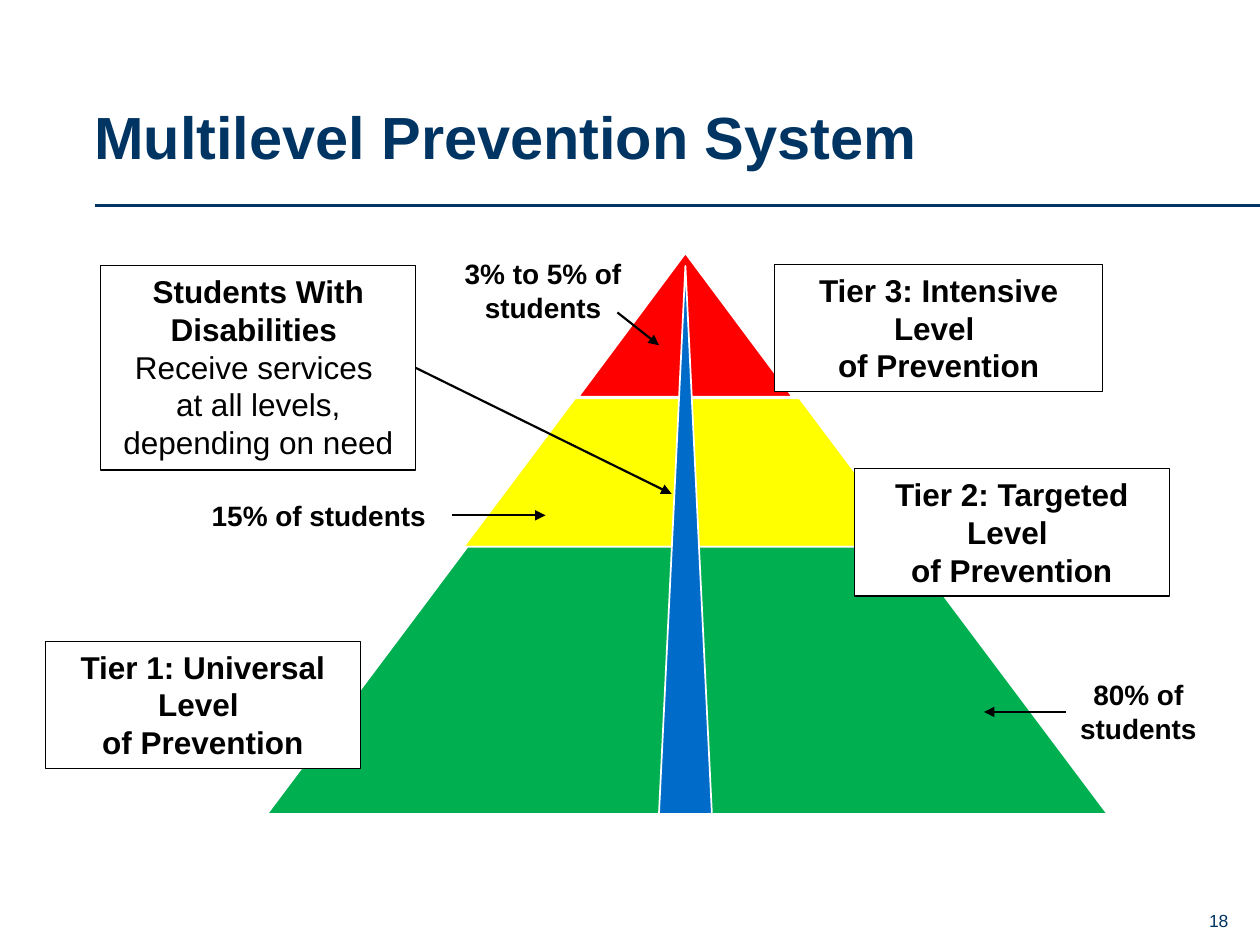
from dataclasses import dataclass

from lxml import etree
from pptx import Presentation
from pptx.dml.color import RGBColor
from pptx.enum.shapes import MSO_CONNECTOR as Connector, MSO_SHAPE as Shape
from pptx.enum.text import MSO_ANCHOR as Anchor, PP_ALIGN as Align
from pptx.oxml.ns import qn
from pptx.util import Inches, Pt


@dataclass(frozen=True)
class Theme:
    font: str = "Arial"
    navy: str = "003462"
    black: str = "000000"
    white: str = "FFFFFF"
    red: str = "FF0000"
    yellow: str = "FFFF00"
    green: str = "00B050"
    blue: str = "006BC9"
    title_size: int = 34
    box_size: int = 18
    label_size: int = 16
    number_size: int = 10


class SlideBuilder:
    def __init__(self, slide, theme):
        self.slide = slide
        self.theme = theme

    def style_font(self, para, size, color, bold):
        font = para.font
        font.name, font.size, font.bold = self.theme.font, Pt(size), bold
        font.color.rgb = RGBColor.from_string(color)

    def title(self, text, area):
        box = self.slide.shapes.title
        box.left, box.top, box.width, box.height = map(Inches, area)
        frame = box.text_frame
        frame.text = text
        frame.vertical_anchor = Anchor.BOTTOM
        self.set_margins(frame, 0, 0)
        para = frame.paragraphs[0]
        para.alignment, para.line_spacing = Align.LEFT, 0.9
        self.style_font(para, self.theme.title_size, self.theme.navy, True)

    def set_margins(self, frame, side, end):
        frame.margin_left = frame.margin_right = Inches(side)
        frame.margin_top = frame.margin_bottom = Inches(end)

    def shape(self, kind, area, fill, line, width, shapes=None):
        """Add a preset shape to the slide, or to a group's shapes."""
        shape = (shapes or self.slide.shapes).add_shape(kind, *map(Inches, area))
        shape.shadow.inherit = False
        if fill:
            shape.fill.solid()
            shape.fill.fore_color.rgb = RGBColor.from_string(fill)
        else:
            shape.fill.background()
        shape.line.color.rgb = RGBColor.from_string(line)
        shape.line.width = Pt(width)
        return shape

    def pyramid(self, levels):
        group = self.slide.shapes.add_group_shape()
        for area, fill in levels:
            level = self.shape(Shape.TRAPEZOID, area, fill, self.theme.white, 1, group.shapes)
            level.adjustments[0] = 0.75

    def box(self, area, paragraphs, fill=None, side_margin=0.1):
        """Add a framed box; paragraphs are (text, bold) pairs."""
        box = self.shape(Shape.RECTANGLE, area, fill, self.theme.black, 0.75)
        frame = box.text_frame
        frame.word_wrap = True
        frame.vertical_anchor = Anchor.TOP
        self.set_margins(frame, side_margin, 0.05)
        for index, (text, bold) in enumerate(paragraphs):
            para = frame.add_paragraph() if index else frame.paragraphs[0]
            para.text = text
            para.alignment = Align.CENTER
            self.style_font(para, self.theme.box_size, self.theme.black, bold)
        return box

    def label(self, area, text, wrap=True):
        box = self.slide.shapes.add_textbox(*map(Inches, area))
        box.text_frame.word_wrap = wrap
        para = box.text_frame.paragraphs[0]
        para.text, para.alignment = text, Align.CENTER
        self.style_font(para, self.theme.label_size, self.theme.black, True)

    def page_number(self, area, text):
        box = self.slide.shapes.add_textbox(*map(Inches, area))
        frame = box.text_frame
        frame.word_wrap = False
        frame.vertical_anchor = Anchor.MIDDLE
        self.set_margins(frame, 0, 0)
        para = frame.paragraphs[0]
        para.text, para.alignment = text, Align.RIGHT
        self.style_font(para, self.theme.number_size, self.theme.navy, False)

    def line(self, start, end, color, width):
        line = self.slide.shapes.add_connector(Connector.STRAIGHT, *map(Inches, start + end))
        line.line.color.rgb = RGBColor.from_string(color)
        line.line.width = Pt(width)
        etree.SubElement(line._element.spPr, qn("a:effectLst"))
        return line

    def arrow(self, start, end):
        arrow = self.line(start, end, self.theme.black, 1.25)
        etree.SubElement(arrow.line._get_or_add_ln(), qn("a:tailEnd"), type="triangle")
        return arrow


def main():
    deck = Presentation()
    deck.slide_width, deck.slide_height = Inches(10), Inches(7.5)
    theme = Theme()
    page = SlideBuilder(deck.slides.add_slide(deck.slide_layouts[5]), theme)

    page.line((0.75, 1.63), (10, 1.63), theme.navy, 1.5)
    page.title("Multilevel Prevention System", (0.75, 0.24, 9, 1.13))
    page.pyramid([
        ((4.59, 2.01, 1.7, 1.14), theme.red),
        ((3.68, 3.16, 3.55, 1.18), theme.yellow),
        ((2.12, 4.34, 6.67, 2.12), theme.green),
    ])
    page.shape(Shape.ISOSCELES_TRIANGLE, (5.23, 2.11, 0.42, 4.35), theme.blue, theme.white, 1)

    disabilities = page.box((0.8, 2.11, 2.5, 1.62), [
        ("Students With Disabilities ", True),
        ("Receive services \nat all levels, depending on need", False),
    ])
    tiers = [
        ("Tier 1: Universal", (0.36, 5.09, 2.5, 1.01), 0.1),
        ("Tier 3: Intensive", (6.15, 2.1, 2.6, 1.01), 0.05),
        ("Tier 2: Targeted", (6.78, 3.72, 2.5, 1.01), 0.1),
    ]
    for name, area, margin in tiers:
        page.box(area, [(f"{name} Level \nof Prevention", True)], theme.white, margin)

    page.arrow((3.3, 2.92), (5.33, 3.92)).begin_connect(disabilities, 3)
    shares = [
        ("3% to 5% of students", (3.4, 1.99, 1.82, 0.64), True, (4.9, 2.48), (5.23, 2.74)),
        ("80% of students", (8.12, 5.33, 1.83, 0.64), True, (8.46, 5.65), (7.81, 5.65)),
        ("15% of students", (1.57, 3.91, 1.92, 0.37), False, (3.59, 4.09), (4.33, 4.09)),
    ]
    for text, area, wrap, start, end in shares:
        page.label(area, text, wrap)
        page.arrow(start, end)

    page.page_number((9.58, 7.22, 0.17, 0.17), "18")
    deck.save("out.pptx")


if __name__ == "__main__":
    main()
